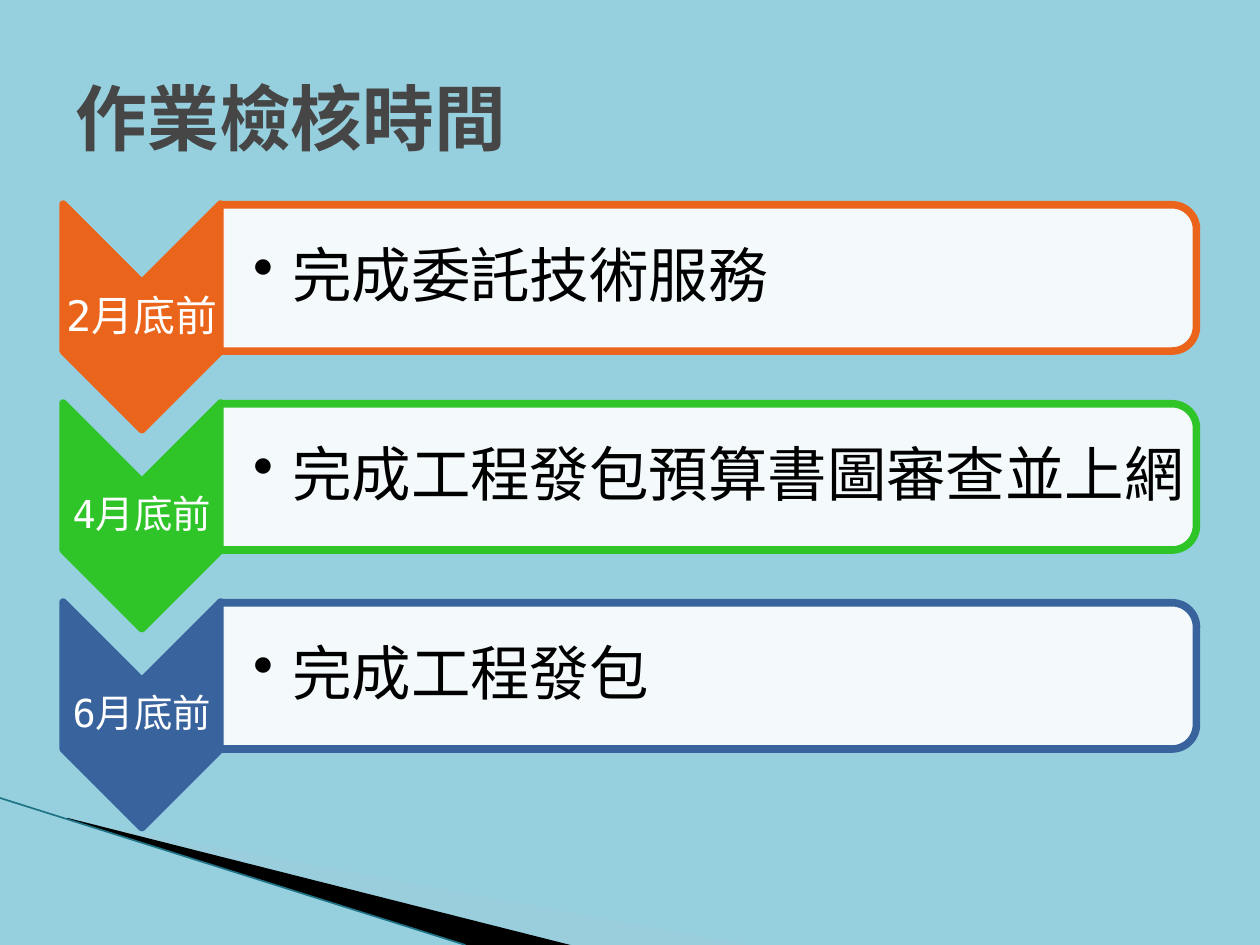
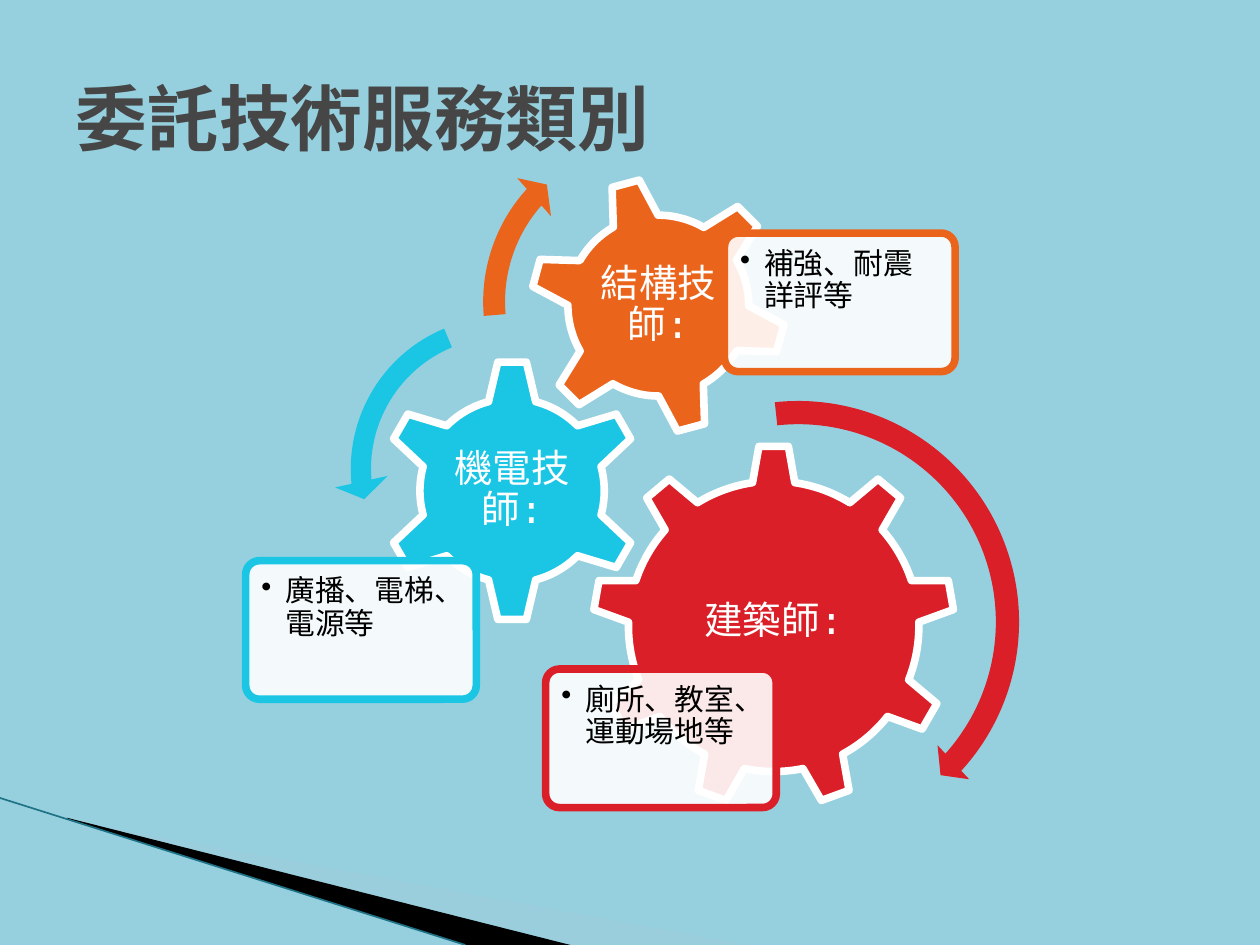
from dataclasses import dataclass
from lxml.etree import SubElement
from pptx import Presentation
from pptx.dml.color import RGBColor
from pptx.enum.shapes import MSO_CONNECTOR, MSO_SHAPE
from pptx.enum.text import MSO_ANCHOR, PP_ALIGN
from pptx.oxml.ns import qn
from pptx.util import Pt


@dataclass(frozen=True)
class Theme:
    font: str = "DejaVu Sans Mono"
    back: str = "96D0DF"
    title: str = "464646"
    ink: str = "000000"
    white: str = "FFFFFF"
    haze: str = "A0CBDC"
    streak: str = "1F7386"
    orange: str = "EB641B"
    green: str = "2FC529"
    blue: str = "39639D"
    red: str = "DA1F28"
    cyan: str = "1BC6E5"
    head: float = 41
    large: float = 34
    month: float = 24
    label: float = 22
    small: float = 17
    edge: float = 4.33


class Deck:
    def __init__(self, theme):
        self.theme = theme
        self.file = Presentation()
        self.file.slide_width, self.file.slide_height = Pt(720), Pt(540)
        self.slide = None

    def page(self, title):
        theme = self.theme
        self.slide = self.file.slides.add_slide(self.file.slide_layouts[5])
        fill = self.slide.background.fill
        fill.solid()
        fill.fore_color.rgb = RGBColor.from_string(theme.back)
        self.wedge([(39.6, 468.7), (428, 540), (328, 540), (39.6, 468)], theme.haze, 40)
        self.wedge([(38.2, 467.3), (326, 540), (265.7, 540), (38.9, 468)], theme.ink)
        self.streak((0, 456), (266, 540))
        head = self.slide.shapes.title
        self.place(head, (36, 21.6, 648, 90))
        head.text_frame.text = title
        head.text_frame.vertical_anchor = MSO_ANCHOR.MIDDLE
        para = head.text_frame.paragraphs[0]
        para.alignment = PP_ALIGN.LEFT
        self.style(para, theme.head, theme.title, True)

    def place(self, shape, box):
        shape.left, shape.top, shape.width, shape.height = map(Pt, box)

    def style(self, para, size, color, bold=False):
        for run in para.runs:
            run.font.name = self.theme.font
            run.font.size = Pt(size)
            run.font.bold = bold
            run.font.color.rgb = RGBColor.from_string(color)

    def paint(self, shape, fill, line=None, alpha=100):
        shape.shadow.inherit = False
        shape.fill.solid()
        shape.fill.fore_color.rgb = RGBColor.from_string(fill)
        if alpha < 100:
            color = shape.fill._xPr.find(qn("a:solidFill"))[0]
            SubElement(color, qn("a:alpha"), val=str(alpha * 1000))
        if line:
            shape.line.color.rgb = RGBColor.from_string(line)
            shape.line.width = Pt(self.theme.edge)
        else:
            shape.line.fill.background()

    def shape(self, kind, box, fill, line=None, alpha=100, turn=0, adjust=()):
        shape = self.slide.shapes.add_shape(kind, *map(Pt, box))
        shape.rotation = turn
        for index, value in enumerate(adjust):
            shape.adjustments[index] = value
        self.paint(shape, fill, line, alpha)

    def wedge(self, points, fill, alpha=100):
        start, *rest = [(Pt(x), Pt(y)) for x, y in points]
        outline = self.slide.shapes.build_freeform(*start, scale=1.0)
        outline.add_line_segments(rest, close=True)
        self.paint(outline.convert_to_shape(), fill, alpha=alpha)

    def streak(self, start, end):
        line = self.slide.shapes.add_connector(
            MSO_CONNECTOR.STRAIGHT, *map(Pt, start + end))
        line.line.color.rgb = RGBColor.from_string(self.theme.streak)
        line.line.width = Pt(0.95)
        SubElement(line._element.spPr, qn("a:effectLst"))

    def text(self, box, words, size, color, pads, anchor=MSO_ANCHOR.MIDDLE, indent=0):
        frame = self.slide.shapes.add_textbox(*map(Pt, box)).text_frame
        frame.word_wrap = True
        frame.vertical_anchor = anchor
        frame.margin_left, frame.margin_top, frame.margin_right, frame.margin_bottom = map(Pt, pads)
        frame.text = words
        para = frame.paragraphs[0]
        para.line_spacing = 0.9
        if indent:
            props = para._p.get_or_add_pPr()
            props.set("marL", str(Pt(indent)))
            props.set("indent", str(-Pt(indent)))
            SubElement(props, qn("a:buChar"), char="•")
        else:
            para.alignment = PP_ALIGN.CENTER
        self.style(para, size, color)

    def step(self, drop, color, month, size, task):
        theme = self.theme
        pads = (1.4,) * 4
        self.shape(MSO_SHAPE.CHEVRON, (16.6, 136.1 + drop, 128.9, 90),
                   color, color, turn=90)
        self.text((36, 162 + drop, 90, 38.9), month, size, theme.white, pads)
        self.shape(MSO_SHAPE.ROUND_2_SAME_RECTANGLE, (362.9, -120.2 + drop, 83.6, 558),
                   theme.white, color, 90, 90)
        self.text((126, 121 + drop, 553.7, 75.6), task, theme.large, theme.ink,
                  (18.7, 1.4, 1.4, 1.4), indent=22.3)

    def gear(self, kind, box, turn, color, name, room, lift, card, note):
        theme = self.theme
        left, top, side = box
        wide, high = room
        self.shape(kind, (left, top, side, side), color, theme.white, turn=turn)
        self.text((left + (side - wide) / 2, top + (side - high) / 2 - lift, wide, high),
                  name, theme.label, theme.white, (2.2,) * 4)
        x, y = card
        self.shape(MSO_SHAPE.ROUNDED_RECTANGLE, (x, y, 131.8, 79.2),
                   theme.white, color, 90, adjust=(0.1,))
        self.text((x + 2.5, y + 2.4, 127.4, 74.2), note, theme.small, theme.ink,
                  (6.5,) * 4, MSO_ANCHOR.TOP, 13.7)


def main():
    theme = Theme()
    deck = Deck(theme)

    deck.page("作業檢核時間")
    steps = [
        (theme.orange, "2月底前", theme.month, "完成委託技術服務"),
        (theme.green, "4月底前", theme.label, "完成工程發包預算書圖審查並上網"),
        (theme.blue, "6月底前", theme.label, "完成工程發包"),
    ]
    for index, step in enumerate(steps):
        deck.step(index * 113.7, *step)

    deck.page("委託技術服務類別")
    gears = [
        (MSO_SHAPE.GEAR_9, (338.4, 254.2, 207.4), 0, theme.red, "建築師:",
         (123.8, 106.6), 2.2, (311.8, 382.3), "廁所、教室、運動場地等"),
        (MSO_SHAPE.GEAR_6, (217.4, 205.2, 150.5), 0, theme.cyan, "機電技師:",
         (74.9, 74.2), 0, (140.4, 320.4), "廣播、電梯、電源等"),
        (MSO_SHAPE.GEAR_6, (302.4, 100.8, 147.6), 345, theme.orange, "結構技師:",
         (82.8, 82.8), 0, (414, 133.2), "補強、耐震詳評等"),
    ]
    for gear in gears:
        deck.gear(*gear)
    arrows = [
        (MSO_SHAPE.CIRCULAR_ARROW, (323.3, 222.5, 265.7), theme.red,
         (0.05, 2.99, 25.29, 158.35, 0.05)),
        (MSO_SHAPE.LEFT_CIRCULAR_ARROW, (190.8, 171.4, 193), theme.cyan,
         (0.06, 4.3, 104.89, 148.38, 0.08)),
        (MSO_SHAPE.CIRCULAR_ARROW, (267.8, 68.4, 208.1), theme.orange,
         (0.06, 3.94, 133.14, 105.08, 0.07)),
    ]
    for kind, (left, top, side), color, adjust in arrows:
        deck.shape(kind, (left, top, side, side), color, adjust=adjust)

    deck.file.save("out.pptx")


if __name__ == "__main__":
    main()
